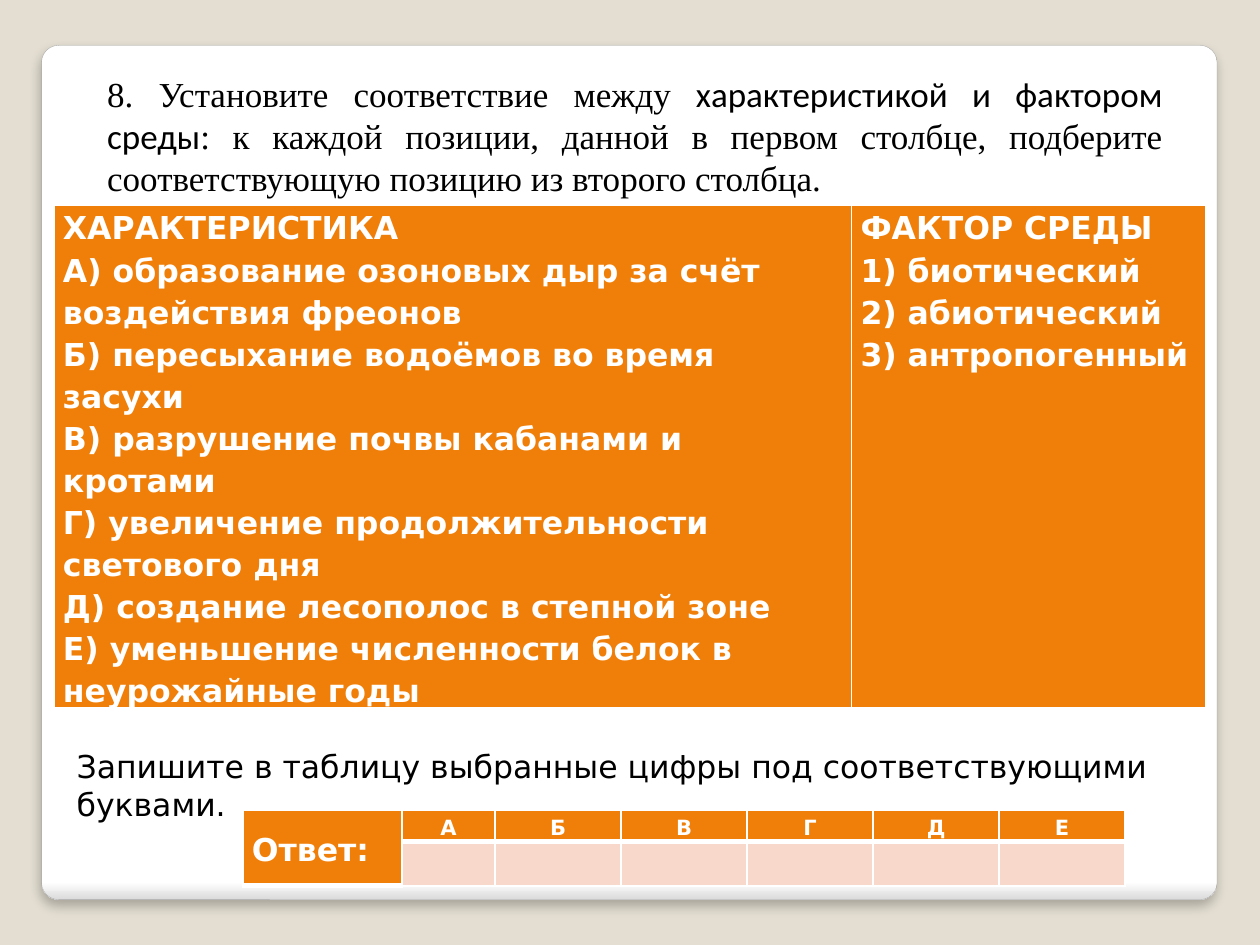
from lxml import etree
from pptx import Presentation
from pptx.dml import color
from pptx.enum import shapes, text
from pptx.oxml import ns
from pptx.util import Inches, Pt

HUES = {"back": "E3DED1", "white": "FFFFFF", "edge": "DADADA", "line": "A4A4A4",
        "head": "F07F09", "body": "F9D8CC", "black": "000000"}
SANS, SERIF = "DejaVu Sans", "Times New Roman"
LEFT, MID, JUST = text.PP_ALIGN.LEFT, text.PP_ALIGN.CENTER, text.PP_ALIGN.JUSTIFY

TRAITS = ["ХАРАКТЕРИСТИКА",
          "А) образование озоновых дыр за счёт",
          "воздействия фреонов",
          "Б) пересыхание водоёмов во время засухи",
          "В) разрушение почвы кабанами и кротами",
          "Г) увеличение продолжительности светового дня",
          "Д) создание лесополос в степной зоне",
          "Е) уменьшение численности белок в неурожайные годы"]
FACTORS = ["ФАКТОР СРЕДЫ", "1) биотический", "2) абиотический", "3) антропогенный"]
TASK = [("8. Установите соответствие между", SERIF),
        (" характеристикой и фактором среды", "Calibri"),
        (": к каждой позиции, данной в первом столбце, подберите "
         "соответствующую позицию из второго столбца.", SERIF)]
NOTE = "Запишите в таблицу выбранные цифры под соответствующими буквами."


def rgb(name):
    """Return the named colour."""
    return color.RGBColor.from_string(HUES[name])


def apply(item, form):
    """Set attributes from a dict of format values."""
    for key, value in form.items():
        setattr(item, key, value)


def add_run(para, words, hue, **form):
    """Add a run of formatted words."""
    run = para.add_run()
    run.text = words
    apply(run.font, form)
    run.font.color.rgb = rgb(hue)


def add_node(root, tag, **attrs):
    """Add a drawing element under root."""
    return etree.SubElement(root, ns.qn(f"a:{tag}"), attrs)


def add_panel(slide):
    """Draw the rounded white panel with its soft shadow."""
    panel = slide.shapes.add_shape(shapes.MSO_SHAPE.ROUNDED_RECTANGLE, Inches(0.33),
                                   Inches(0.36), Inches(9.33), Inches(6.78))
    panel.adjustments[0] = 0.02
    panel.fill.gradient()
    panel.fill.gradient_angle = 270
    for stop, (place, hue) in zip(panel.fill.gradient_stops, [(0.98, "white"), (1, "edge")]):
        stop.position = place
        stop.color.rgb = rgb(hue)
    panel.line.color.rgb = rgb("line")
    panel.line.width = Pt(0.16)
    panel.shadow.inherit = False
    effects = panel._element.spPr.find(ns.qn("a:effectLst"))
    shade = add_node(effects, "outerShdw", blurRad=str(Pt(6)), dist=str(Pt(4)),
                     dir="5400000", algn="t", rotWithShape="0")
    tint = add_node(shade, "srgbClr", val=HUES["black"])
    add_node(tint, "alpha", val="25000")


def add_title(slide):
    """Place the task in the title, above the panel."""
    title = slide.shapes.title
    apply(title, {"left": Inches(0.75), "top": Inches(0.52),
                  "width": Inches(8.58), "height": Inches(1.11)})
    apply(title.text_frame, {"word_wrap": True, "auto_size": text.MSO_AUTO_SIZE.NONE,
                             "vertical_anchor": text.MSO_ANCHOR.MIDDLE})
    para = title.text_frame.paragraphs[0]
    para.alignment = JUST
    for words, face in TASK:
        add_run(para, words, "black", name=face, size=Pt(20))
    slide.shapes._spTree.append(title._element)


def add_note(slide):
    """Add the instruction between the tables."""
    box = slide.shapes.add_textbox(Inches(0.51), Inches(5.88), Inches(8.98), Inches(0.71))
    box.text_frame.word_wrap = True
    add_run(box.text_frame.paragraphs[0], NOTE, "black", name=SANS, size=Pt(18))


def add_grid(slide, left, top, cols, rows):
    """Add a table with the given column widths and row heights."""
    grid = slide.shapes.add_table(len(rows), len(cols), Inches(left), Inches(top),
                                  Inches(sum(cols)), Inches(sum(rows))).table
    apply(grid, {"first_row": False, "horz_banding": False})
    for col, width in zip(grid.columns, cols):
        col.width = Inches(width)
    for row, height in zip(grid.rows, rows):
        row.height = Inches(height)
    return grid


def fill_cell(cell, lines=(), hue="head", size=18, align=LEFT,
              anchor=text.MSO_ANCHOR.MIDDLE, base=3):
    """Give a cell its borders, fill and lines of bold text."""
    apply(cell, {"margin_left": Inches(0.07), "margin_right": Inches(0.07),
                 "margin_top": 0, "margin_bottom": 0, "vertical_anchor": anchor})
    props = cell._tc.get_or_add_tcPr()
    for side, width in zip("LRTB", (1, 1, 1, base)):
        edge = add_node(props, f"ln{side}", w=str(Pt(width)))
        add_node(add_node(edge, "solidFill"), "srgbClr", val=HUES["white"])
    cell.fill.solid()
    cell.fill.fore_color.rgb = rgb(hue)
    frame = cell.text_frame
    for i, line in enumerate(lines):
        para = frame.add_paragraph() if i else frame.paragraphs[0]
        apply(para, {"alignment": align, "line_spacing": 1.15})
        add_run(para, line, "white", name=SANS, size=Pt(size), bold=True)


def add_match(slide):
    """Add the table of traits and factors."""
    grid = add_grid(slide, 0.43, 1.63, [6.33, 2.81], [3.98])
    for cell, lines in zip(grid.rows[0].cells, [TRAITS, FACTORS]):
        fill_cell(cell, lines, anchor=text.MSO_ANCHOR.TOP)


def add_answer(slide):
    """Add the answer table with a blank under each letter."""
    grid = add_grid(slide, 1.93, 6.43, [1.26, 0.74] + [1] * 5, [0.25, 0.35])
    grid.cell(0, 0).merge(grid.cell(1, 0))
    fill_cell(grid.cell(0, 0), ["Ответ:"])
    for col, letter in enumerate("АБВГДЕ", 1):
        fill_cell(grid.cell(0, col), [letter], size=12, align=MID)
        fill_cell(grid.cell(1, col), hue="body", base=1)


def main():
    """Build and save the slide."""
    deck = Presentation()
    apply(deck, {"slide_width": Inches(10), "slide_height": Inches(7.5)})
    slide = deck.slides.add_slide(deck.slide_layouts[5])
    slide.background.fill.solid()
    slide.background.fill.fore_color.rgb = rgb("back")
    for draw in (add_panel, add_match, add_title, add_note, add_answer):
        draw(slide)
    deck.save("out.pptx")


if __name__ == "__main__":
    main()
